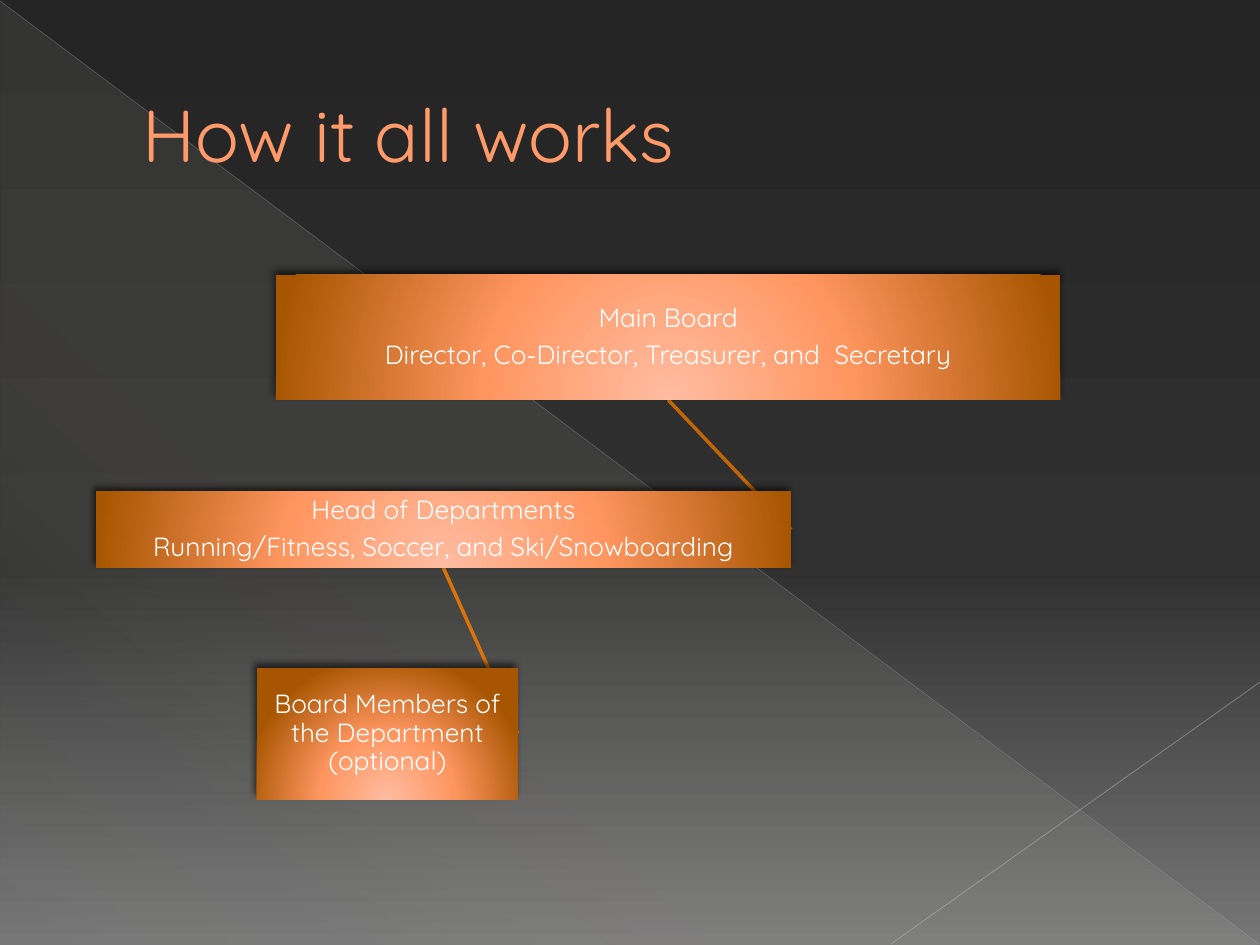
from pptx import Presentation
from pptx.dml.color import RGBColor
from pptx.enum.shapes import MSO_CONNECTOR, MSO_SHAPE
from pptx.enum.text import MSO_ANCHOR, PP_ALIGN
from pptx.oxml import parse_xml
from pptx.oxml.ns import nsdecls, qn
from pptx.util import Cm, Pt

STRAIGHT = MSO_CONNECTOR.STRAIGHT
RECTANGLE, TRIANGLE = MSO_SHAPE.RECTANGLE, MSO_SHAPE.RIGHT_TRIANGLE
MIDDLE, CENTER = MSO_ANCHOR.MIDDLE, PP_ALIGN.CENTER
BOTTOM_SIDE, RIGHT_SIDE = 2, 3
FONT = "Quicksand"

BLACK = RGBColor(0x00, 0x00, 0x00)
WHITE = RGBColor(0xFF, 0xFF, 0xFF)
NIGHT = RGBColor(0x24, 0x24, 0x24)
CHARCOAL = RGBColor(0x30, 0x30, 0x30)
GREY = RGBColor(0x76, 0x76, 0x76)
SAND = RGBColor(0xE3, 0xDE, 0xD1)
SILVER = RGBColor(0xB6, 0xB6, 0xB6)
LIGHT_GREY = RGBColor(0xBF, 0xBF, 0xBF)
PEACH = RGBColor(0xFF, 0xBC, 0xA2)
ORANGE = RGBColor(0xFF, 0x96, 0x60)
BROWN = RGBColor(0xA7, 0x55, 0x00)
TITLE_ORANGE = RGBColor(0xFF, 0x9B, 0x6A)
TITLE_EDGE = RGBColor(0xA6, 0x58, 0x06)
UPPER_LINK = RGBColor(0xC0, 0x66, 0x07)
LOWER_LINK = RGBColor(0xDA, 0x73, 0x08)

LINEAR = '<a:lin ang="{}" scaled="0"/>'
GLOW = ('<a:path path="circle"><a:fillToRect l="50000" t="155000" '
        'r="50000" b="-55000"/></a:path>')


def color_xml(color, opacity=100):
    return (f'<a:srgbClr val="{color}">'
            f'<a:alpha val="{opacity * 1000}"/></a:srgbClr>')


def set_gradient(properties, stops, shade):
    """Replace the empty fill in properties; stops are (percent, color[, opacity])."""
    gs = "".join(f'<a:gs pos="{pos * 1000}">{color_xml(*color)}</a:gs>'
                 for pos, *color in stops)
    properties.replace(properties.find(qn("a:noFill")), parse_xml(
        f'<a:gradFill {nsdecls("a")} rotWithShape="1">'
        f'<a:gsLst>{gs}</a:gsLst>{shade}</a:gradFill>'))


def add_gradient_shape(slide, kind, box, stops, shade):
    s = slide.shapes.add_shape(kind, *map(Cm, box))
    s.shadow.inherit = False
    s.line.fill.background()
    s.fill.background()
    set_gradient(s.element.spPr, stops, shade)
    return s


def add_line(slide, ends, color, width, opacity=100):
    line = slide.shapes.add_connector(STRAIGHT, *map(Cm, ends))
    line.line.color.rgb = color
    line.line.width = Pt(width)
    srgb = line.element.spPr.find(".//" + qn("a:srgbClr"))
    srgb.append(parse_xml(f'<a:alpha {nsdecls("a")} val="{opacity * 1000}"/>'))
    line.element.spPr.append(parse_xml(f'<a:effectLst {nsdecls("a")}/>'))
    return line


def add_backdrop(slide, left, top, width, height):
    slide.background.fill.background()
    set_gradient(slide.element.find(".//" + qn("p:bgPr")),
                 [(0, NIGHT), (60, CHARCOAL), (100, GREY)],
                 LINEAR.format(90 * 60000))
    add_gradient_shape(slide, TRIANGLE,
                       (left + 0.02, top + 0.04, width - 0.04, height - 0.04),
                       [(0, SAND, 10), (70, SAND, 8), (100, SAND, 1)],
                       LINEAR.format(133 * 60000))
    right, bottom = left + width, top + height
    add_line(slide, (left, top + 0.02, right - 0.02, bottom - 0.02),
             SILVER, 0.39, 35)
    add_line(slide, (right, bottom - 5.3, right - 7.44, bottom - 0.02),
             LIGHT_GREY, 0.47, 45)


def add_title(slide, text, box):
    tf = slide.shapes.add_textbox(*map(Cm, box)).text_frame
    tf.word_wrap = True
    tf.vertical_anchor = MIDDLE
    tf.margin_left = Cm(1.6)
    r = tf.paragraphs[0].add_run()
    r.text = text
    r.font.name, r.font.size = FONT, Pt(42)
    r.font.color.rgb = TITLE_ORANGE
    r.font._element.insert(0, parse_xml(
        f'<a:ln {nsdecls("a")} w="{Pt(0.5)}"><a:solidFill>'
        f'{color_xml(TITLE_EDGE)}</a:solidFill></a:ln>'))


def add_card(slide, lines, box):
    s = add_gradient_shape(slide, RECTANGLE, box,
                           [(0, PEACH), (46, ORANGE), (100, BROWN)], GLOW)
    s.element.spPr.find(qn("a:effectLst")).append(parse_xml(
        f'<a:outerShdw {nsdecls("a")} blurRad="{Pt(4)}" dist="{Pt(3)}" '
        f'dir="{245 * 60000}" rotWithShape="0">{color_xml(BLACK, 60)}'
        '</a:outerShdw>'))
    tf = s.text_frame
    tf.word_wrap = True
    tf.vertical_anchor = MIDDLE
    tf.margin_left = tf.margin_right = Cm(0.03)
    tf.margin_top = tf.margin_bottom = Cm(0.03)
    tf.text = "\n".join(lines)
    for p in tf.paragraphs:
        p.alignment = CENTER
        p.line_spacing = 0.9
        p.space_after = Pt(5.25)
        p.font.name, p.font.size = FONT, Pt(15)
        p.font.color.rgb = WHITE
    return s


def link_cards(slide, upper, lower, color):
    """Join two cards with a line that runs behind both of them."""
    line = add_line(slide, (0, 0, 1, 1), color, 2)
    line.begin_connect(upper, BOTTOM_SIDE)
    line.end_connect(lower, RIGHT_SIDE)
    upper.element.getparent().remove(line.element)
    first_card = min(upper, lower, key=lambda s: s.shape_id)
    first_card.element.addprevious(line.element)


def add_hierarchy(slide, left, top):
    board = add_card(slide, ["Main Board",
                             "Director, Co-Director, Treasurer, and  Secretary"],
                     (left + 3.63, top, 15.82, 2.52))
    heads = add_card(slide, ["Head of Departments",
                             "Running/Fitness, Soccer, and Ski/Snowboarding"],
                     (left, top + 4.36, 14.02, 1.55))
    members = add_card(slide, ["Board Members of the Department (optional)"],
                       (left + 3.25, top + 7.93, 5.26, 2.64))
    link_cards(slide, board, heads, UPPER_LINK)
    link_cards(slide, heads, members, LOWER_LINK)


def main():
    prs = Presentation()
    prs.slide_width, prs.slide_height = Cm(25.4), Cm(19.05)
    slide = prs.slides.add_slide(prs.slide_layouts[6])
    add_backdrop(slide, 0, 0, 25.4, 19.05)
    add_title(slide, "How it all works", (1.27, 0.74, 22.86, 3.89))
    add_hierarchy(slide, 1.93, 5.54)
    prs.save("out.pptx")


if __name__ == "__main__":
    main()
